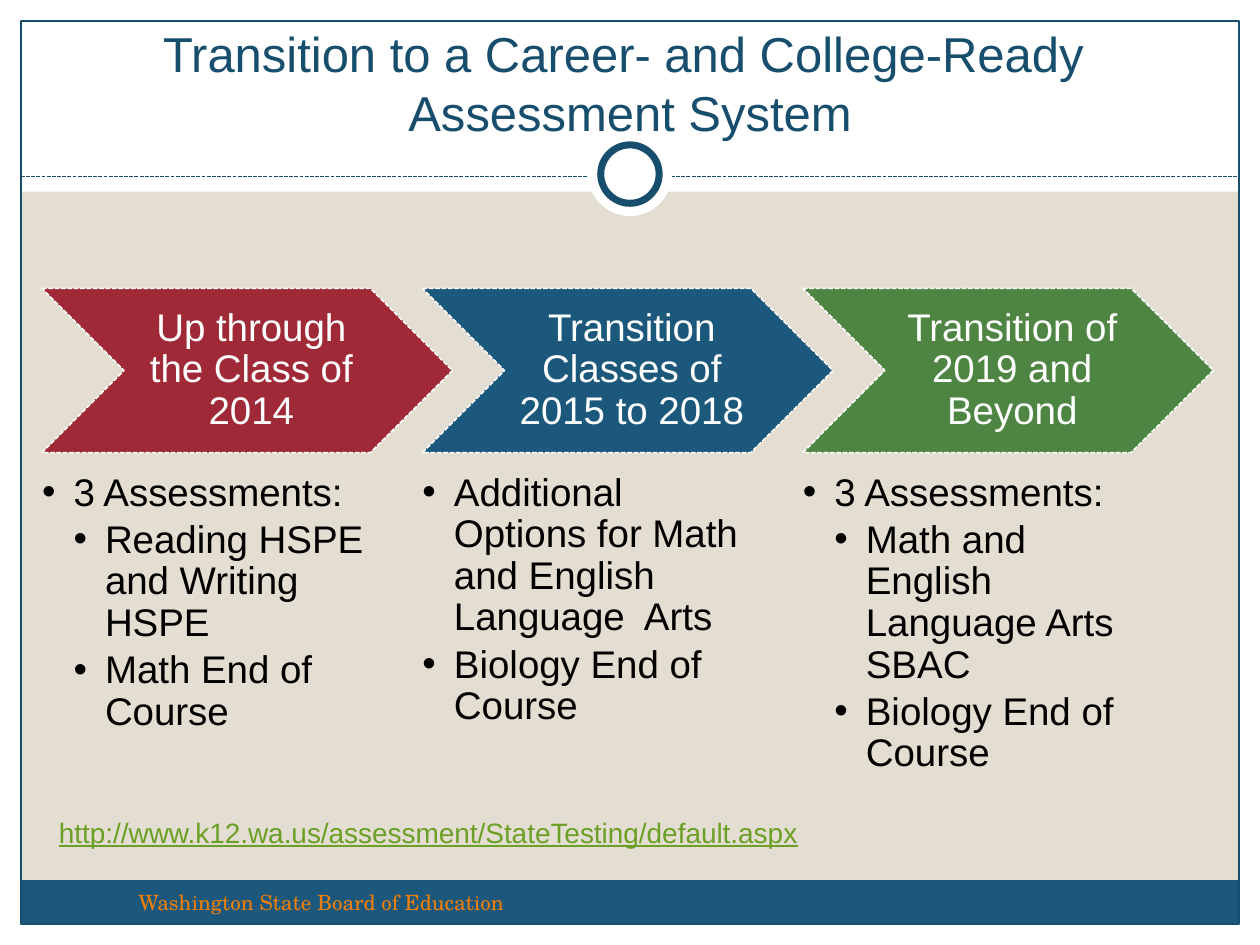
from lxml.etree import SubElement
from pptx import Presentation
from pptx.dml.color import RGBColor
from pptx.enum.dml import MSO_LINE
from pptx.enum.shapes import MSO_CONNECTOR, MSO_SHAPE
from pptx.enum.text import MSO_ANCHOR, PP_ALIGN
from pptx.oxml.ns import qn
from pptx.util import Pt

WHITE = RGBColor(0xFF, 0xFF, 0xFF)
BLACK = RGBColor(0, 0, 0)
SAND = RGBColor(0xE3, 0xDE, 0xD1)
NAVY = RGBColor(0x18, 0x4E, 0x6D)
BLUE = RGBColor(0x1B, 0x58, 0x7C)
RED = RGBColor(0x9F, 0x29, 0x36)
GREEN = RGBColor(0x4E, 0x85, 0x42)
ORANGE = RGBColor(0xF0, 0x7F, 0x09)
LIME = RGBColor(0x6B, 0x9F, 0x25)

STAGES = [
    (RED, "Up through the Class of 2014", [
        (1, "3 Assessments:"),
        (2, "Reading HSPE and Writing HSPE"),
        (2, "Math End of Course")]),
    (BLUE, "Transition Classes of 2015 to 2018", [
        (1, "Additional Options for Math and English Language  Arts"),
        (1, "Biology End of Course")]),
    (GREEN, "Transition of 2019 and Beyond", [
        (1, "3 Assessments:"),
        (2, "Math and English Language Arts SBAC"),
        (2, "Biology End of Course")]),
]


def add_form(slide, kind, box, fill=None, line=None, width=0.75, dash=None):
    form = slide.shapes.add_shape(kind, *map(Pt, box))
    form.shadow.inherit = False
    if fill is None:
        form.fill.background()
    else:
        form.fill.solid()
        form.fill.fore_color.rgb = fill
    if line is None:
        form.line.fill.background()
    else:
        form.line.color.rgb = line
        form.line.width = Pt(width)
        form.line.dash_style = dash
    return form


def add_frame(slide, box, pads=(7.2, 3.6, 7.2, 3.6), anchor=MSO_ANCHOR.TOP, wrap=True):
    frame = slide.shapes.add_textbox(*map(Pt, box)).text_frame
    frame.word_wrap = wrap
    frame.vertical_anchor = anchor
    (frame.margin_left, frame.margin_top,
     frame.margin_right, frame.margin_bottom) = map(Pt, pads)
    return frame


def add_run(para, text, size, color, font="Arial"):
    run = para.add_run()
    run.text = text
    run.font.size = Pt(size)
    run.font.name = font
    run.font.color.rgb = color
    return run


def add_bullet(para, level):
    props = para._p.get_or_add_pPr()
    props.set("marL", str(Pt(18 * level)))
    props.set("indent", str(-Pt(18)))
    para.level = level
    para.line_spacing = 0.9
    para.space_after = Pt(3.3)
    SubElement(props, qn("a:buFont")).set("typeface", "Arial")
    SubElement(props, qn("a:buChar")).set("char", "•")


def add_back(slide, wide, high):
    slide.background.fill.solid()
    slide.background.fill.fore_color.rgb = SAND
    edge = 12
    for box in ((0, high - edge, wide, edge), (0, 0, wide, 109.5),
                (0, 0, edge, high), (wide - edge, 0, edge, high)):
        add_form(slide, MSO_SHAPE.RECTANGLE, box, WHITE)
    inner = wide - 2 * edge
    add_form(slide, MSO_SHAPE.RECTANGLE, (edge, 503, inner, 25), BLUE)
    add_form(slide, MSO_SHAPE.RECTANGLE, (edge, edge, inner, high - 2 * edge), line=NAVY)
    rule = slide.shapes.add_connector(
        MSO_CONNECTOR.STRAIGHT, Pt(edge), Pt(100.8), Pt(wide - edge), Pt(100.8))
    rule.line.color.rgb = NAVY
    rule.line.width = Pt(0.75)
    rule.line.dash_style = MSO_LINE.SQUARE_DOT
    SubElement(rule._element.spPr, qn("a:effectLst"))
    for size, line in ((48, None), (33.4, NAVY)):
        box = (wide / 2 - size / 2, 99.5 - size / 2, size, size)
        add_form(slide, MSO_SHAPE.OVAL, box, WHITE, line, 4)


def add_title(slide, box):
    para = add_frame(slide, box, anchor=MSO_ANCHOR.BOTTOM).paragraphs[0]
    para.alignment = PP_ALIGN.CENTER
    add_run(para, "Transition to a Career- and College-Ready ", 28, NAVY)
    para.add_line_break()
    add_run(para, "Assessment System", 28, NAVY)


def add_stage(slide, box, color, head, items):
    left, top, wide, high = box
    tall = 93.8
    add_form(slide, MSO_SHAPE.CHEVRON, (left, top, wide, tall), color,
             WHITE, 0.9, MSO_LINE.SQUARE_DOT)
    label = add_frame(slide, (left + tall / 2, top, wide - tall, tall),
                      (7.2, 2.4, 2.4, 2.4), MSO_ANCHOR.MIDDLE)
    para = label.paragraphs[0]
    para.alignment = PP_ALIGN.CENTER
    para.line_spacing = 0.9
    add_run(para, head, 22, WHITE)
    gap = 105.4
    body = add_frame(slide, (left, top + gap, wide * 0.8, high - gap), (0, 0, 0, 0))
    for spot, (level, text) in enumerate(items):
        para = body.add_paragraph() if spot else body.paragraphs[0]
        add_bullet(para, level)
        add_run(para, text, 22, BLACK)


def add_link(slide, box):
    para = add_frame(slide, box, wrap=False).paragraphs[0]
    text = "http://www.k12.wa.us/assessment/StateTesting/default.aspx"
    add_run(para, text, 16, LIME).font.underline = True


def add_foot(slide, box):
    para = add_frame(slide, box).paragraphs[0]
    add_run(para, "Washington State Board of Education", 12, ORANGE, "TeX Gyre Schola")


def main():
    deck = Presentation()
    deck.slide_width, deck.slide_height = Pt(720), Pt(540)
    slide = deck.slides.add_slide(deck.slide_layouts[6])
    add_back(slide, 720, 540)
    add_title(slide, (24, 24, 672, 60))
    add_foot(slide, (72, 504.7, 282, 28.8))
    for spot, stage in enumerate(STAGES):
        add_stage(slide, (24 + 217.4 * spot, 164.8, 234.6, 276.6), *stage)
    add_link(slide, (26.6, 462.2, 442, 48))
    deck.save("out.pptx")


if __name__ == "__main__":
    main()
